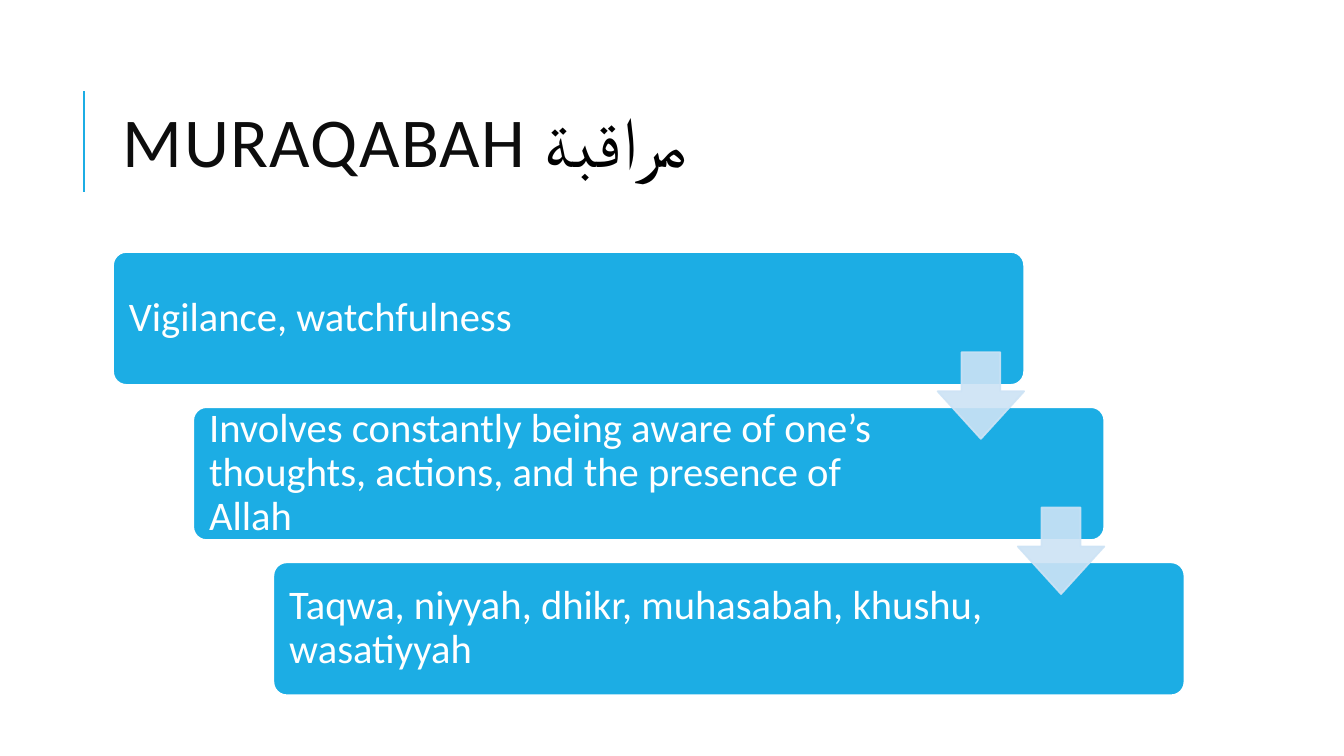
from dataclasses import dataclass

from lxml.etree import SubElement
from pptx import Presentation
from pptx.dml.color import RGBColor
from pptx.enum.shapes import MSO_CONNECTOR, MSO_SHAPE
from pptx.enum.text import MSO_ANCHOR
from pptx.oxml.ns import qn
from pptx.util import Cm, Pt

COLORS = {
    "accent": "1CADE4",
    "arrow": "CDE3F5",
    "white": "FFFFFF",
    "title": "0D0D0D",
    "arabic": "000000",
}

FIRST_LEFT, FIRST_TOP = 2.85, 6.35
STEP_RIGHT, STEP_DOWN = 2.02, 3.91
BOX_WIDTH, BOX_HEIGHT = 22.96, 3.35
LABEL_MARGIN = 0.1
ARROW_SIZE, ARROW_DROP = 2.18, 2.53


@dataclass
class Step:
    text: str
    label_width: float


STEPS = [
    Step("Vigilance, watchfulness", 19.33),
    Step(
        "Involves constantly being aware of one’s thoughts, actions, "
        "and the presence of Allah",
        18.54,
    ),
    Step("Taqwa, niyyah, dhikr, muhasabah, khushu, wasatiyyah", 18.54),
]


def color(name: str) -> RGBColor:
    return RGBColor.from_string(COLORS[name])


def add_span(para, text: str, *, size: float, font: str, fill: str,
             tracking: float = 0) -> None:
    """Append a run; tracking is the letter spacing in points."""
    span = para.add_run()
    span.text = text
    span.font.size = Pt(size)
    span.font.name = font
    span.font.color.rgb = color(fill)
    if tracking:
        span.font._element.set("spc", str(round(tracking * 100)))


def add_text_box(page, left: float, top: float, width: float, height: float, *,
                 inset: float, line_spacing: float):
    """Add a wrapped, vertically centred text box and return its paragraph."""
    box = page.shapes.add_textbox(Cm(left), Cm(top), Cm(width), Cm(height))
    frame = box.text_frame
    frame.word_wrap = True
    frame.vertical_anchor = MSO_ANCHOR.MIDDLE
    frame.margin_left = frame.margin_right = Cm(inset)
    frame.margin_top = frame.margin_bottom = Cm(inset)
    para = frame.paragraphs[0]
    para.line_spacing = line_spacing
    return para


def add_block(page, kind: MSO_SHAPE, left: float, top: float, width: float,
              height: float, *, adjustments: list[float], fill: str,
              line: str, opacity: int = 100) -> None:
    block = page.shapes.add_shape(kind, Cm(left), Cm(top), Cm(width), Cm(height))
    block.shadow.inherit = False
    for index, value in enumerate(adjustments):
        block.adjustments[index] = value
    block.fill.solid()
    block.fill.fore_color.rgb = color(fill)
    block.line.color.rgb = color(line)
    block.line.width = Pt(1.25)
    if opacity < 100:
        for tint in block._element.spPr.iter(qn("a:srgbClr")):
            SubElement(tint, qn("a:alpha"), val=str(opacity * 1000))


def add_title(page) -> None:
    rule = page.shapes.add_connector(
        MSO_CONNECTOR.STRAIGHT, Cm(2.11), Cm(4.83), Cm(2.11), Cm(2.29))
    rule.line.color.rgb = color("accent")
    rule.line.width = Pt(1.5)
    SubElement(rule._element.spPr, qn("a:effectLst"))

    para = add_text_box(page, 2.85, 1.63, 27, 4.17, inset=0.25, line_spacing=0.8)
    add_span(para, "MURAQABAH ", size=50, font="Calibri", fill="title", tracking=1)
    add_span(para, "مراقبة", size=50, font="Roboto", fill="arabic", tracking=1)


def add_staircase(page) -> None:
    corners = [(FIRST_LEFT + index * STEP_RIGHT, FIRST_TOP + index * STEP_DOWN)
               for index in range(len(STEPS))]
    for step, (left, top) in zip(STEPS, corners):
        add_block(page, MSO_SHAPE.ROUNDED_RECTANGLE, left, top, BOX_WIDTH,
                  BOX_HEIGHT, adjustments=[0.1], fill="accent", line="white")
        para = add_text_box(page, left + LABEL_MARGIN, top + LABEL_MARGIN,
                            step.label_width, BOX_HEIGHT - 2 * LABEL_MARGIN,
                            inset=0.3, line_spacing=0.9)
        add_span(para, step.text, size=29, font="Calibri", fill="white")
    for left, top in corners[:-1]:
        add_block(page, MSO_SHAPE.DOWN_ARROW, left + BOX_WIDTH - ARROW_SIZE,
                  top + ARROW_DROP, ARROW_SIZE, ARROW_SIZE,
                  adjustments=[0.45, 0.55], fill="arrow", line="arrow",
                  opacity=90)


def main() -> None:
    deck = Presentation()
    deck.slide_width, deck.slide_height = Cm(33.87), Cm(19.05)
    page = deck.slides.add_slide(deck.slide_layouts[6])
    page.background.fill.solid()
    page.background.fill.fore_color.rgb = color("white")
    add_title(page)
    add_staircase(page)
    deck.save("out.pptx")


if __name__ == "__main__":
    main()
